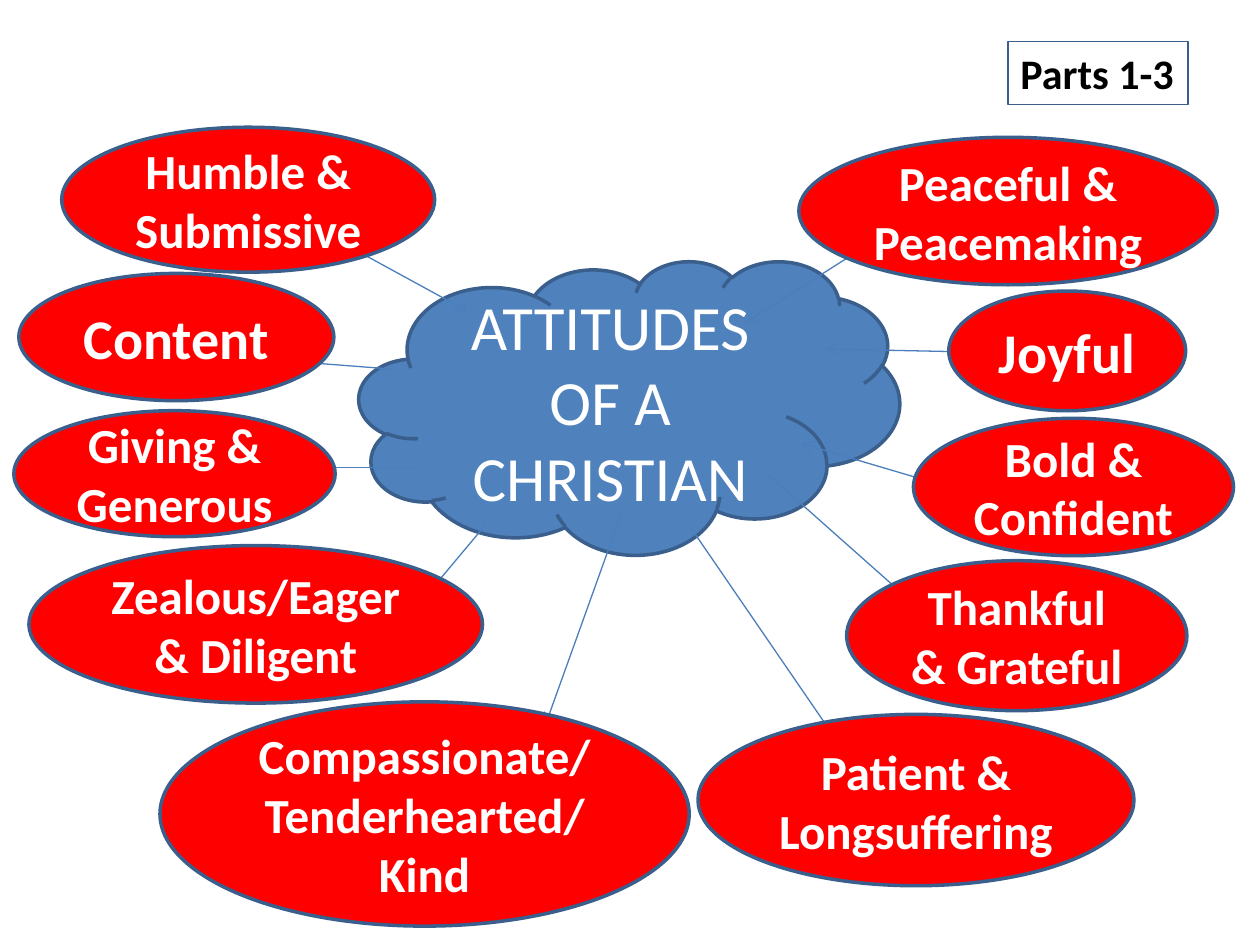
import lxml.etree
import pptx
import pptx.dml.color
import pptx.enum.shapes
import pptx.enum.text
import pptx.oxml.ns
import pptx.util

Inches = pptx.util.Inches
Pt = pptx.util.Pt
RGBColor = pptx.dml.color.RGBColor
MSO_SHAPE = pptx.enum.shapes.MSO_SHAPE
PP_ALIGN = pptx.enum.text.PP_ALIGN
qn = pptx.oxml.ns.qn

WHITE = RGBColor(0xFF, 0xFF, 0xFF)
BLACK = RGBColor(0x00, 0x00, 0x00)
RED = RGBColor(0xFF, 0x00, 0x00)
BLUE = RGBColor(0x4F, 0x81, 0xBD)
OUTLINE = RGBColor(0x3A, 0x5F, 0x8C)
ARROW = RGBColor(0x4B, 0x7E, 0xBC)

presentation = pptx.Presentation()
presentation.slide_width = Inches(10)
presentation.slide_height = Inches(7.5)
slide = presentation.slides.add_slide(presentation.slide_layouts[6])


def write(frame, text, color, align, font_format):
    frame.text = text
    for paragraph in frame.paragraphs:
        paragraph.alignment = align
        font = paragraph.runs[0].font
        font.color.rgb = color
        for name, value in {"name": "Calibri", **font_format}.items():
            setattr(font, name, value)


def add_bubble(kind, box, fill, text, font_format):
    bubble = slide.shapes.add_shape(kind, *map(Inches, box))
    bubble.shadow.inherit = False
    bubble.fill.solid()
    bubble.fill.fore_color.rgb = fill
    bubble.line.color.rgb = OUTLINE
    bubble.line.width = Pt(2)
    frame = bubble.text_frame
    frame.word_wrap = True
    frame.vertical_anchor = pptx.enum.text.MSO_ANCHOR.MIDDLE
    write(frame, text, WHITE, PP_ALIGN.CENTER, font_format)


add_bubble(MSO_SHAPE.CLOUD, (2.85, 2.07, 4.29, 2.33), BLUE,
           "ATTITUDES OF A CHRISTIAN", {"size": Pt(36), "bold": False})

attitudes = [
    ("Humble & Submissive", 28, (0.49, 1.01, 2.96, 1.15), (2.63, 1.88, 3.71, 2.47)),
    ("Zealous/Eager & Diligent", 28, (0.23, 4.33, 3.6, 1.25), (3.85, 4.17, 3.33, 4.79)),
    ("Joyful", 32, (7.53, 2.31, 1.88, 0.95), (7.53, 2.79, 6.55, 2.77)),
    ("Thankful & Grateful", 28, (6.72, 4.45, 2.7, 1.19), (6.09, 3.76, 7.25, 4.79)),
    ("Content", 32, (0.15, 2.17, 2.5, 1.01), (3.12, 2.93, 2.21, 2.86)),
    ("Giving & Generous", 28, (0.11, 3.26, 2.55, 1), (3.33, 3.71, 2.51, 3.71)),
    ("Patient & Longsuffering", 28, (5.54, 5.67, 3.46, 1.36), (5.47, 4.17, 6.67, 5.92)),
    ("Compassionate/Tenderhearted/\nKind", 28, (1.27, 5.57, 4.2, 1.78), (4.93, 4.08, 4.33, 5.75)),
    ("Bold & Confident", 28, (7.25, 3.32, 2.54, 1.09), (7.51, 3.86, 6.36, 3.52)),
    ("Peaceful & Peacemaking", 28, (6.34, 1.09, 3.32, 1.17), (6.83, 1.98, 5.92, 2.56)),
]
for attitude, size, box, ends in attitudes:
    arrow = slide.shapes.add_connector(
        pptx.enum.shapes.MSO_CONNECTOR.STRAIGHT, *map(Inches, ends))
    arrow.line.color.rgb = ARROW
    arrow.line.width = Pt(0.75)
    properties = arrow._element.spPr
    lxml.etree.SubElement(properties.find(qn("a:ln")), qn("a:tailEnd"), type="arrow")
    lxml.etree.SubElement(properties, qn("a:effectLst"))
    add_bubble(MSO_SHAPE.OVAL, box, RED, attitude, {"size": Pt(size), "bold": True})

parts = slide.shapes.add_textbox(Inches(8), Inches(0.33), Inches(1.43), Inches(0.5))
parts.line.color.rgb = OUTLINE
parts.line.width = Pt(0.75)
parts.text_frame.word_wrap = False
parts.text_frame.auto_size = pptx.enum.text.MSO_AUTO_SIZE.SHAPE_TO_FIT_TEXT
write(parts.text_frame, "Parts 1-3", BLACK, PP_ALIGN.LEFT, {"size": Pt(24), "bold": True})

presentation.save("out.pptx")
